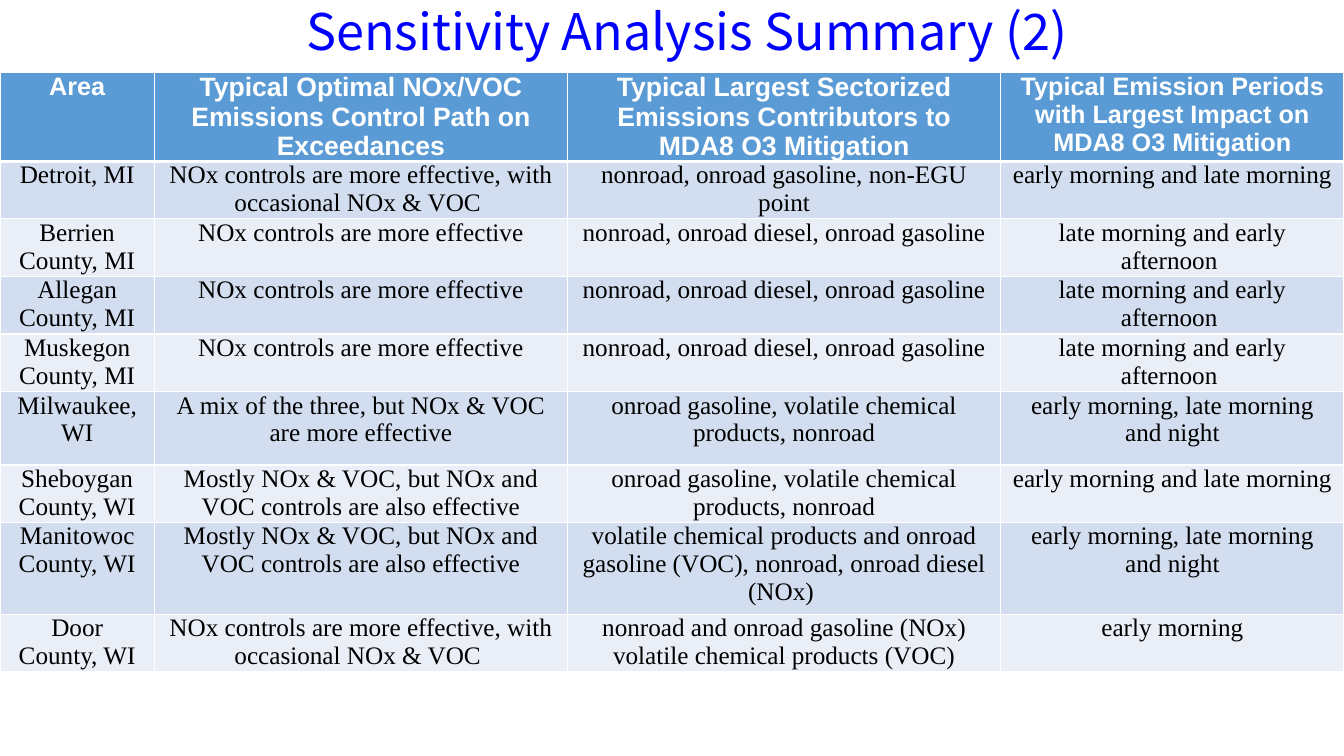
from dataclasses import dataclass

from lxml import etree
from pptx import Presentation
from pptx.dml.color import RGBColor
from pptx.enum.text import MSO_ANCHOR, MSO_AUTO_SIZE, PP_ALIGN
from pptx.oxml.ns import qn
from pptx.util import Cm, Pt

LEFT, CENTER = PP_ALIGN.LEFT, PP_ALIGN.CENTER
MIDDLE = MSO_ANCHOR.MIDDLE
FIXED = MSO_AUTO_SIZE.NONE


@dataclass(frozen=True)
class Theme:
    """Colours, fonts and type sizes of the slide."""
    blue: str = "0000FF"
    black: str = "000000"
    white: str = "FFFFFF"
    head: str = "5B9BD5"
    bands: tuple = ("D2DEEF", "EAEFF7")
    title_font: str = "Noto Sans CJK SC"
    head_font: str = "Arial"
    body_font: str = "Times New Roman"
    title_size: int = 36
    head_sizes: tuple = (18, 19, 19, 18)
    body_size: int = 18


THEME = Theme()
COLS = (3.89, 10.41, 10.92, 8.65)
ROWS = (2.21, 1.45, 1.45, 1.45, 1.45, 1.85, 1.45, 2.31, 1.45)
HEADS = (
    "Area",
    "Typical Optimal NOx/VOC Emissions Control Path on Exceedances",
    "Typical Largest Sectorized Emissions Contributors to MDA8 O3 Mitigation",
    "Typical Emission Periods with Largest Impact on MDA8 O3 Mitigation",
)
NOX = "NOx controls are more effective"
SOME = "NOx controls are more effective, with occasional NOx & VOC "
MOST = "Mostly NOx & VOC, but NOx and VOC controls are also effective"
DIESEL = "nonroad, onroad diesel, onroad gasoline"
CHEM = "onroad gasoline, volatile chemical products, nonroad"
EARLY = "early morning and late morning "
LATE = "late morning and early afternoon "
NIGHT = "early morning, late morning and night"
AREAS = (
    ("Detroit, MI", SOME, "nonroad, onroad gasoline, non-EGU point", EARLY),
    ("Berrien County, MI", NOX, DIESEL, LATE),
    ("Allegan County, MI", NOX, DIESEL, LATE),
    ("Muskegon County, MI", NOX, DIESEL, LATE),
    ("Milwaukee, WI", "A mix of the three, but NOx & VOC are more effective", CHEM, NIGHT),
    ("Sheboygan County, WI", MOST, CHEM, EARLY),
    ("Manitowoc County, WI", MOST,
     "volatile chemical products and onroad gasoline (VOC), nonroad, onroad diesel (NOx) ", NIGHT),
    ("Door County, WI", SOME,
     "nonroad and onroad gasoline (NOx) volatile chemical products (VOC)", "early morning"),
)


def write(frame, text, *, font, size, color, bold=False, align=CENTER, before=0, after=0):
    """Put one formatted paragraph into a text frame."""
    para = frame.paragraphs[0]
    para.alignment = align
    para.space_before, para.space_after = Pt(before), Pt(after)
    run = para.add_run()
    run.text = text
    run.font.name, run.font.size, run.font.bold = font, Pt(size), bold
    run.font.color.rgb = RGBColor.from_string(color)


def add_title(slide, text):
    """Add the slide title."""
    frame = slide.shapes.add_textbox(Cm(7.47), Cm(0), Cm(19.96), Cm(1.52)).text_frame
    frame.word_wrap = True
    frame.auto_size = FIXED
    frame.vertical_anchor = MIDDLE
    write(frame, text, font=THEME.title_font, size=THEME.title_size,
          color=THEME.blue, align=LEFT)


def set_edges(cell, top, bottom):
    """Draw white cell borders with the given top and bottom widths."""
    props = cell._tc.get_or_add_tcPr()
    for side, width in (("L", 1), ("R", 1), ("T", top), ("B", bottom)):
        line = etree.SubElement(props, qn(f"a:ln{side}"), w=str(Pt(width)))
        fill = etree.SubElement(line, qn("a:solidFill"))
        etree.SubElement(fill, qn("a:srgbClr"), val=THEME.white)


def fill_cell(cell, text, fill, top=1, bottom=1, **style):
    """Give a cell its borders, fill, margins and text."""
    set_edges(cell, top, bottom)
    cell.fill.solid()
    cell.fill.fore_color.rgb = RGBColor.from_string(fill)
    cell.margin_left = cell.margin_right = Cm(0.3)
    cell.margin_top = cell.margin_bottom = Cm(0)
    write(cell.text_frame, text, **style)


def add_grid(slide):
    """Add the table of areas with its header row."""
    table = slide.shapes.add_table(len(ROWS), len(COLS), Cm(0), Cm(1.83),
                                   Cm(sum(COLS)), Cm(sum(ROWS))).table
    for col, width in zip(table.columns, COLS):
        col.width = Cm(width)
    for row, height in zip(table.rows, ROWS):
        row.height = Cm(height)
    for c, (text, size) in enumerate(zip(HEADS, THEME.head_sizes)):
        fill_cell(table.cell(0, c), text, THEME.head, bottom=3, font=THEME.head_font,
                  size=size, color=THEME.white, bold=True, before=3, after=3)
    for r, area in enumerate(AREAS, 1):
        for c, text in enumerate(area):
            fill_cell(table.cell(r, c), text, THEME.bands[(r - 1) % 2],
                      top=3 if r == 1 else 1, font=THEME.body_font,
                      size=THEME.body_size, color=THEME.black, after=6)


def main():
    """Build and save the slide."""
    deck = Presentation()
    deck.slide_width, deck.slide_height = Cm(33.87), Cm(19.05)
    slide = deck.slides.add_slide(deck.slide_layouts[6])
    add_title(slide, "Sensitivity Analysis Summary (2)")
    add_grid(slide)
    deck.save("out.pptx")


if __name__ == "__main__":
    main()
